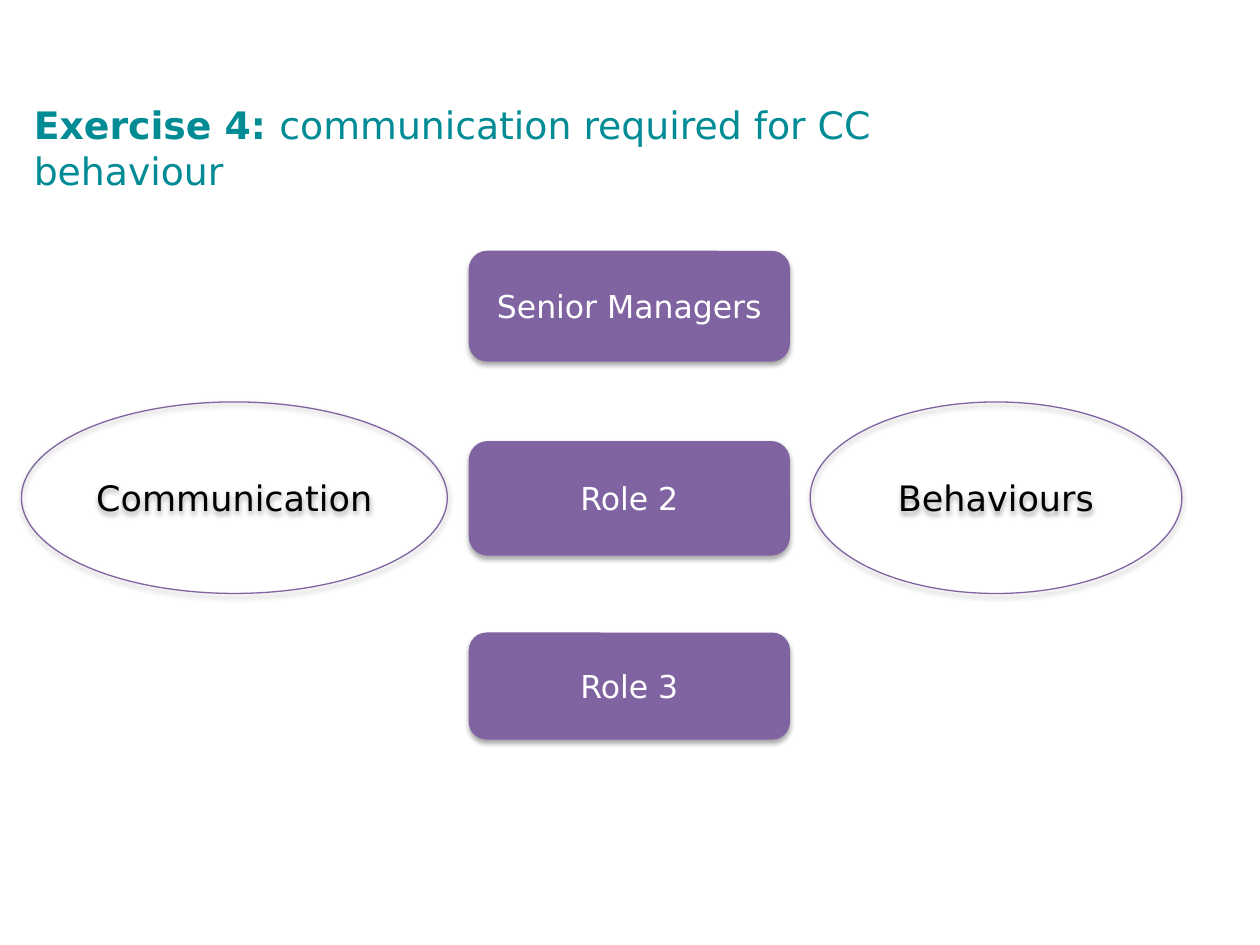
from dataclasses import dataclass

from lxml import etree
from pptx import Presentation
from pptx.dml.color import RGBColor
from pptx.enum.shapes import MSO_SHAPE
from pptx.enum.text import MSO_ANCHOR, PP_ALIGN
from pptx.oxml.ns import qn
from pptx.util import Inches, Pt

ROUNDED, ELLIPSE = MSO_SHAPE.ROUNDED_RECTANGLE, MSO_SHAPE.OVAL
MIDDLE, CENTER = MSO_ANCHOR.MIDDLE, PP_ALIGN.CENTER

TEAL = RGBColor(0x00, 0x8B, 0x95)
PURPLE = RGBColor(0x80, 0x64, 0xA2)
WHITE = RGBColor(0xFF, 0xFF, 0xFF)
BLACK = RGBColor(0x00, 0x00, 0x00)
FONT = "DejaVu Sans"

ROLE_LEFT, ROLE_WIDTH = 3.72, 2.55
TOPIC_TOP, TOPIC_HEIGHT = 3.19, 1.52


@dataclass
class Role:
    text: str
    top: float
    height: float


@dataclass
class Topic:
    text: str
    left: float
    width: float


ROLES = [
    Role("Senior Managers", 1.99, 0.88),
    Role("Role 2", 3.5, 0.91),
    Role("Role 3", 5.02, 0.85),
]
TOPICS = [Topic("Communication", 0.17, 3.38), Topic("Behaviours", 6.43, 2.95)]


def add_run(p, text: str, size: float, color: RGBColor, bold: bool = False) -> None:
    r = p.add_run()
    r.text = text
    r.font.name = FONT
    r.font.size = Pt(size)
    r.font.bold = bold
    r.font.color.rgb = color


def add_soft_shadow(sp) -> None:
    """Give the shape a faint shadow falling straight down."""
    sp.shadow.inherit = False
    effects = sp._element.spPr.find(qn("a:effectLst"))
    shadow = etree.SubElement(
        effects, qn("a:outerShdw"), blurRad=str(Pt(3.1)), dist=str(Pt(1.8)),
        dir=str(90 * 60000), rotWithShape="0")
    color = etree.SubElement(shadow, qn("a:srgbClr"), val=str(BLACK))
    etree.SubElement(color, qn("a:alpha"), val="35000")


def add_label_shape(slide, kind: MSO_SHAPE, left: float, top: float, width: float,
                    height: float, text: str, size: float, color: RGBColor):
    sp = slide.shapes.add_shape(
        kind, Inches(left), Inches(top), Inches(width), Inches(height))
    add_soft_shadow(sp)
    tf = sp.text_frame
    tf.word_wrap = True
    tf.margin_left = tf.margin_right = Inches(0.04)
    tf.vertical_anchor = MIDDLE
    p = tf.paragraphs[0]
    p.alignment = CENTER
    add_run(p, text, size, color)
    return sp


def add_role(slide, role: Role) -> None:
    sp = add_label_shape(slide, ROUNDED, ROLE_LEFT, role.top, ROLE_WIDTH,
                         role.height, role.text, 18, WHITE)
    sp.fill.solid()
    sp.fill.fore_color.rgb = PURPLE
    sp.line.fill.background()


def add_topic(slide, topic: Topic) -> None:
    sp = add_label_shape(slide, ELLIPSE, topic.left, TOPIC_TOP, topic.width,
                         TOPIC_HEIGHT, topic.text, 20, BLACK)
    sp.fill.background()
    sp.line.color.rgb = PURPLE
    sp.line.width = Pt(0.75)


def add_title(slide) -> None:
    box = slide.shapes.add_textbox(
        Inches(0.17), Inches(0.76), Inches(7.47), Inches(0.64))
    tf = box.text_frame
    tf.word_wrap = True
    tf.margin_top = Inches(0.05)
    p = tf.paragraphs[0]
    add_run(p, "Exercise 4: ", 21.6, TEAL, bold=True)
    add_run(p, "communication required for CC behaviour", 21.6, TEAL)


def main() -> None:
    prs = Presentation()
    prs.slide_width, prs.slide_height = Inches(10), Inches(7.5)
    slide = prs.slides.add_slide(prs.slide_layouts[6])
    add_title(slide)
    for role in ROLES:
        add_role(slide, role)
    for topic in TOPICS:
        add_topic(slide, topic)
    prs.save("out.pptx")


if __name__ == "__main__":
    main()
